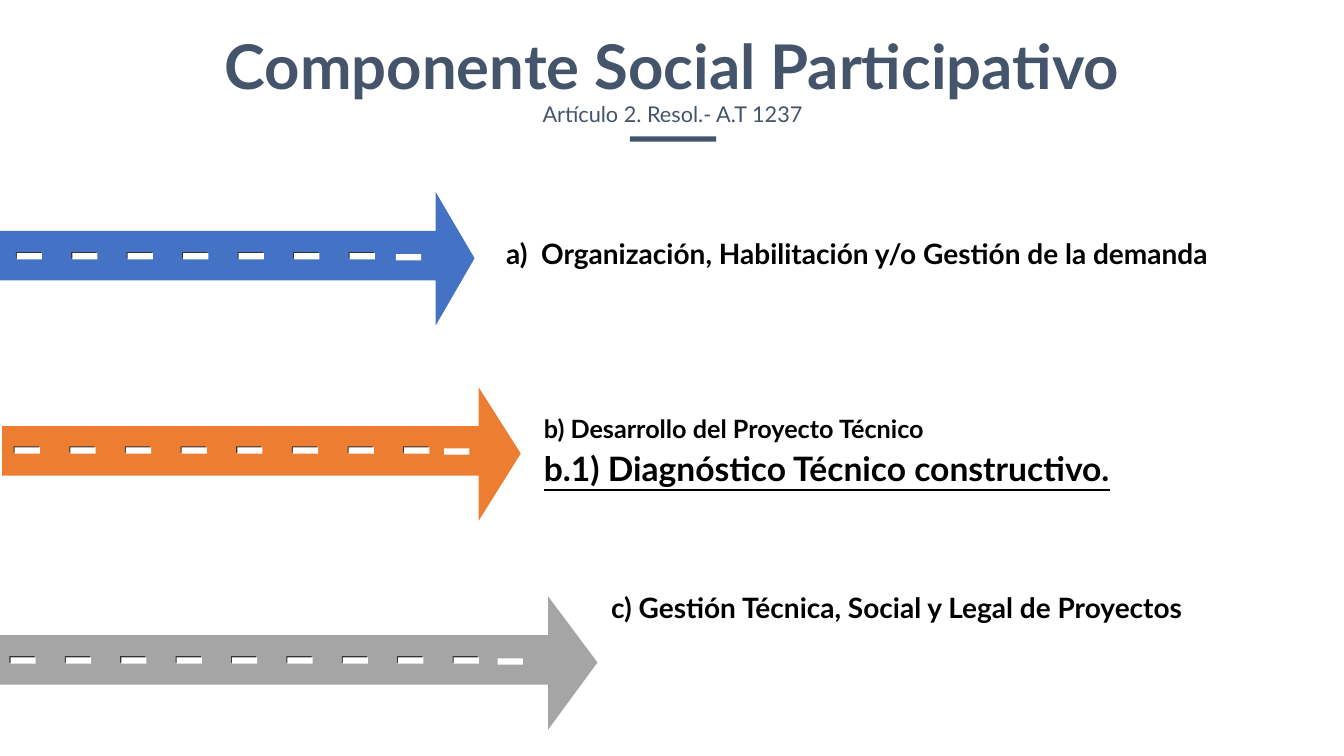
"""Build a slide with three road arrows and their captions."""
from pptx import Presentation
from pptx import util as u
from pptx.dml import color
from pptx.enum import shapes, text

PX = 9525
FONT = "Lato"
SLATE, BLACK, WHITE, DARK = "44546A", "000000", "FFFFFF", "333333"


def px(n):
    """Turn pixels into EMU."""
    return u.Emu(round(n * PX))


def rgb(code):
    """Turn a hex string into a colour."""
    return color.RGBColor.from_string(code)


def paint(shape, fill):
    """Give a shape a plain fill without line or shadow."""
    shape.shadow.inherit = False
    shape.fill.solid()
    shape.fill.fore_color.rgb = rgb(fill)
    shape.line.fill.background()


def block(slide, x, y, w, h, fill):
    """Add a filled rectangle."""
    kind = shapes.MSO_SHAPE.RECTANGLE
    paint(slide.shapes.add_shape(kind, px(x), px(y), px(w), px(h)), fill)


def arrow(slide, left, neck, tip, top, fill):
    """Add a road that ends in an arrowhead."""
    high, low, mid, end = top + 37, top + 84, top + 63, top + 127
    form = slide.shapes.build_freeform(tip, mid, scale=PX)
    form.add_line_segments([(neck, top), (neck, high), (left, high),
                            (left, low), (neck, low), (neck, end)])
    paint(form.convert_to_shape(), fill)


def lane(slide, first, last, count, extra, y):
    """Add evenly spaced dashes with dark edges, and one plain dash."""
    step = (last - first) / (count - 1)
    for k in range(count):
        x = first + k * step
        block(slide, x, y, 24, 6, DARK)
        block(slide, x + 1, y + 1, 24, 6, WHITE)
    block(slide, extra, y + 2, 24, 6, WHITE)


def label(slide, box, lines, tint=BLACK, bold=True, space=1.1, pad=(12, 6),
          mid=False, wrap=True, before=0):
    """Add a text box from (words, size, underline) lines."""
    frame = slide.shapes.add_textbox(*map(px, box)).text_frame
    frame.word_wrap = wrap
    frame.margin_left = frame.margin_right = px(pad[0])
    frame.margin_top = frame.margin_bottom = px(pad[1])
    for k, (words, size, under) in enumerate(lines):
        para = frame.add_paragraph() if k else frame.paragraphs[0]
        para.text = words
        para.alignment = text.PP_ALIGN.CENTER if mid else text.PP_ALIGN.LEFT
        para.line_spacing = space
        para.space_before = u.Pt(before)
        font = para.font
        font.name, font.size, font.bold = FONT, u.Pt(size), bold
        font.color.rgb = rgb(tint)
        if under:
            font.underline = True


def main():
    """Build and save the slide."""
    deck = Presentation()
    deck.slide_width, deck.slide_height = px(1280), px(720)
    slide = deck.slides.add_slide(deck.slide_layouts[6])

    label(slide, (173, 25, 935, 76),
          [("Componente Social Participativo", 44, False)],
          SLATE, space=1.0, pad=(5, 2), mid=True, wrap=False)
    block(slide, 600, 130, 82, 5, SLATE)
    label(slide, (335, 85, 611, 44),
          [("Artículo 2. Resol.- A.T 1237", 15.5, False)],
          SLATE, bold=False, space=1.2, mid=True, before=3)

    roads = [
        ((-2, 415, 452, 183, "4472C4"), (15, 332, 7, 377, 240)),
        ((2, 456, 496, 369, "ED7D31"), (13, 384, 8, 423, 425)),
        ((0, 522, 569, 568, "A5A5A5"), (9, 431, 9, 474, 625)),
    ]
    for road, marks in roads:
        arrow(slide, *road)
        lane(slide, *marks)

    label(slide, (470, 216, 793, 44),
          [("a)  Organización, Habilitación y/o Gestión de la demanda",
            20, False)])
    label(slide, (506, 385, 756, 86),
          [("b) Desarrollo del Proyecto Técnico", 18, False),
           ("b.1) Diagnóstico Técnico constructivo.", 24, True)])
    label(slide, (570, 553, 708, 44),
          [("c) Gestión Técnica, Social y Legal de Proyectos", 20, False)])

    deck.save("out.pptx")


if __name__ == "__main__":
    main()
